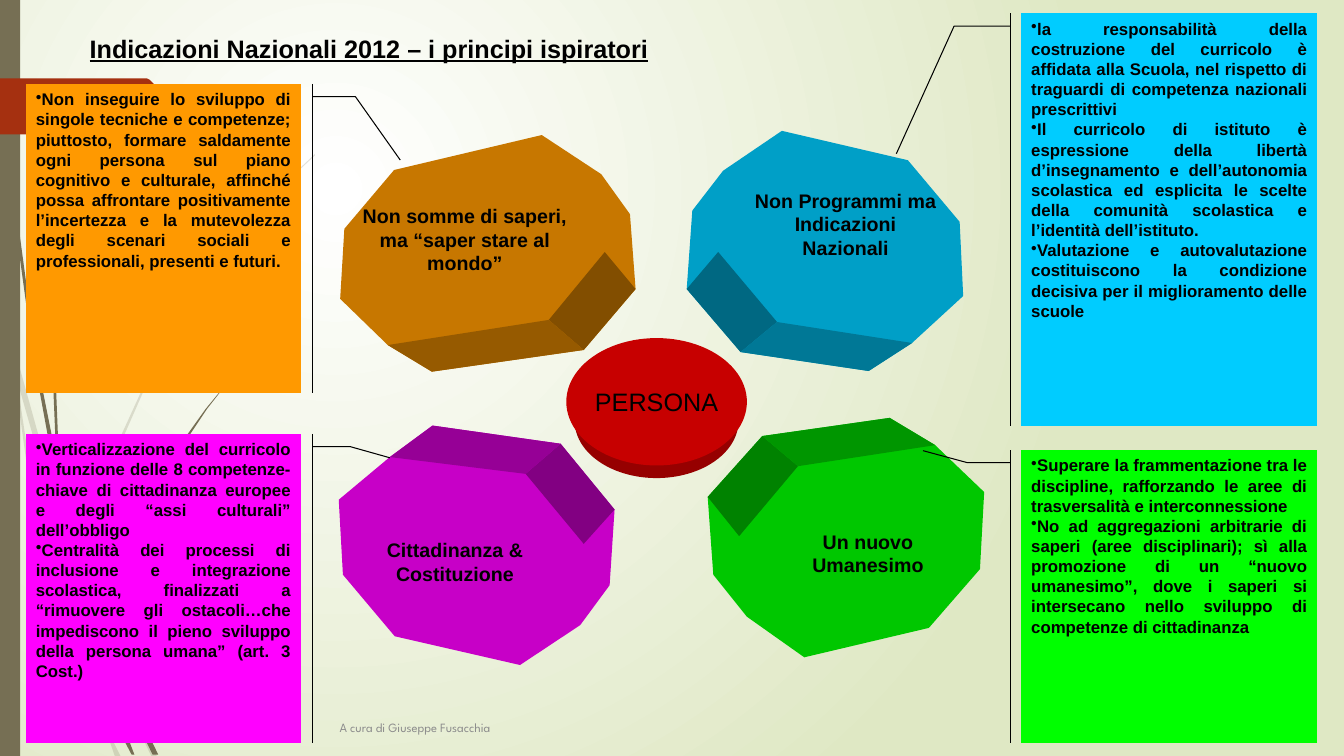
"""Build a slide on the guiding principles of the 2012 national guidelines."""
from lxml import etree
from pptx import Presentation
from pptx.dml.color import RGBColor
from pptx.enum.shapes import MSO_SHAPE
from pptx.enum.text import MSO_ANCHOR, PP_ALIGN
from pptx.oxml import parse_xml
from pptx.oxml.ns import nsdecls, qn
from pptx.util import Pt

OVAL, RECT = MSO_SHAPE.OVAL, MSO_SHAPE.RECTANGLE
CALLOUT = MSO_SHAPE.LINE_CALLOUT_2_ACCENT_BAR
LEFT, MID, JUST = PP_ALIGN.LEFT, PP_ALIGN.CENTER, PP_ALIGN.JUSTIFY
TOP, CENTER = MSO_ANCHOR.TOP, MSO_ANCHOR.MIDDLE
BLACK, GRAY = RGBColor(0, 0, 0), RGBColor(0x8C, 0x8C, 0x8C)
OLIVE, RUST = RGBColor(0x76, 0x6F, 0x54), RGBColor(0xA5, 0x30, 0x10)
CYAN, ORANGE = RGBColor(0, 0xCC, 0xFF), RGBColor(0xFF, 0x99, 0)
LIME, PINK = RGBColor(0, 0xFF, 0), RGBColor(0xFF, 0, 0xFF)
RED = RGBColor(0xFF, 0, 0)
FRONT, SLOPE, SIDE = 0.78, 0.59, 0.51

TITLE = "Indicazioni Nazionali 2012 – i principi ispiratori"
CREDIT = "A cura di Giuseppe Fusacchia"
HUB = "PERSONA"

CALLS = [
    (CYAN, (729.5, 9.5, 211.5, 295), (0.031, -0.038, 0.031, -0.227, 0.34, -0.422), [
        "la responsabilità della costruzione del curricolo è affidata alla Scuola, nel rispetto di traguardi di competenza nazionali prescrittivi",
        "Il curricolo di istituto è espressione della libertà d’insegnamento e dell’autonomia scolastica ed esplicita le scelte della comunità scolastica e l’identità dell’istituto.",
        "Valutazione e autovalutazione costituiscono la condizione decisiva per il miglioramento delle scuole"]),
    (ORANGE, (18.5, 60, 196.5, 221), (0.041, 1.041, 0.041, 1.198, 0.246, 1.361), [
        "Non inseguire lo sviluppo di singole tecniche e competenze; piuttosto, formare saldamente ogni persona sul piano cognitivo e culturale, affinché possa affrontare positivamente l’incertezza e la mutevolezza degli scenari sociali e professionali, presenti e futuri."]),
    (PINK, (18.5, 310, 196.5, 221), (0.041, 1.041, 0.041, 1.179, 0.077, 1.323), [
        "Verticalizzazione del curricolo in funzione delle 8 competenze-chiave di cittadinanza europee e degli “assi culturali” dell’obbligo",
        "Centralità dei processi di inclusione e integrazione scolastica, finalizzati a “rimuovere gli ostacoli…che impediscono il pieno sviluppo della persona umana” (art. 3 Cost.)"]),
    (LIME, (729.5, 321.5, 211.5, 209.5), (0.043, -0.038, 0.043, -0.182, 0.002, -0.332), [
        "Superare la frammentazione tra le discipline, rafforzando le aree di trasversalità e interconnessione",
        "No ad aggregazioni arbitrarie di saperi (aree disciplinari); sì alla promozione di un “nuovo umanesimo”, dove i saperi si intersecano nello sviluppo di competenze di cittadinanza"]),
]

GEMS = [
    (CYAN, "Non Programmi ma Indicazioni Nazionali", (538, 130, 132, 60),
     [(490.5, 206.5), (529, 251.5), (620.5, 265), (651.5, 245), (688, 211.5),
      (685.5, 158.5), (648.5, 114.5), (558.5, 93.5), (516.5, 122), (494.5, 150.5)],
     (513, 180), (555, 230)),
    (ORANGE, "Non somme di saperi, ma “saper stare al mondo”", (255, 141, 154, 60),
     [(454, 206.5), (417, 250), (308.5, 265.5), (277, 246.5), (243, 213.5),
      (246, 163.5), (281.5, 121.5), (387, 96.5), (429.5, 124.5), (450, 153)],
     (432, 180), (392, 228.5)),
    (LIME, "Un nuovo Umanesimo", (554, 365, 132, 60),
     [(505.5, 355), (544.5, 311.5), (635.5, 298.5), (668, 318), (703, 351.5),
      (700, 406.5), (663.5, 448.5), (574.5, 469.5), (533.5, 440.5), (509.5, 410.5)],
     (528, 383), (570, 333)),
    (PINK, "Cittadinanza & Costituzione", (259, 371, 132, 60),
     [(439, 364), (400.5, 317), (309, 304), (278.5, 326.5), (242, 357),
      (245, 410.5), (282, 454.5), (371.5, 475), (414.5, 446.5), (435.5, 418)],
     (417, 388.5), (375.5, 338.5)),
]

PALE = [
    [(42, 376), (60, 431), (61, 422), (45, 374), (10, 248), (12, 271)],
    [(66, 437), (63, 429), (63, 439), (89, 500), (108, 540), (112, 540), (91, 498)],
    [(67, 492), (50, 446), (22, 338), (12, 271), (8, 252), (20, 338), (47, 447),
     (66, 499), (73, 514), (71, 509)],
    [(60, 431), (63, 465), (67, 492), (69, 498), (76, 512), (74, 508), (66, 465), (63, 439)],
    [(63, 420), (79, 333), (115, 251), (165, 176), (193, 143), (209, 126), (225, 111),
     (225, 110), (208, 126), (193, 142), (164, 176), (114, 251), (77, 332), (61, 420), (63, 429)],
    [(73, 514), (82, 540), (86, 540)],
]
DARK = [
    [(5, 79), (12, 168), (24, 256), (40, 343), (41, 346), (40, 326), (26, 256),
     (14, 167), (6, 78), (3, 0), (2, 0)],
    [(63, 426), (76, 464), (76, 454), (67, 425), (43, 340), (46, 364)],
    [(81, 467), (79, 462), (80, 472), (95, 510), (109, 539), (113, 539), (98, 508)],
    [(79, 498), (71, 473), (52, 400), (46, 364), (41, 343), (49, 401), (67, 474),
     (80, 510), (84, 520), (84, 516)],
    [(43, 340), (42, 326), (39, 251), (42, 176), (45, 139), (50, 102), (45, 139),
     (40, 176), (37, 251), (40, 323)],
    [(80, 456), (90, 397), (114, 343), (148, 292), (166, 269), (176, 258), (188, 248),
     (187, 248), (176, 258), (166, 269), (147, 292), (112, 341), (88, 397), (76, 454), (79, 461)],
    [(76, 464), (79, 498), (84, 508), (88, 518), (87, 516), (80, 472)],
    [(84, 508), (79, 498), (84, 516), (84, 520), (94, 539), (96, 539), (88, 518)],
]
TAG = [(0, 56), (105, 56), (107, 57), (125, 75), (125, 78), (107, 95), (105, 96), (0, 96)]

BACK = f"""<a:gradFill {nsdecls('a')} rotWithShape="1"><a:gsLst>
<a:gs pos="0"><a:srgbClr val="FFFFFF"/></a:gs><a:gs pos="100000"><a:srgbClr val="DFE8C4"/></a:gs>
</a:gsLst><a:path path="circle"><a:fillToRect l="50000" t="50000" r="100000" b="100000"/></a:path></a:gradFill>"""


def shade(tint, part):
    return RGBColor(*(round(c * part) for c in tint))


def paint(shape, tint):
    shape.shadow.inherit = False
    shape.fill.solid()
    shape.fill.fore_color.rgb = tint
    shape.line.fill.background()
    return shape


def solid(shapes, kind, at, tint):
    return paint(shapes.add_shape(kind, *map(Pt, at)), tint)


def poly(shapes, dots, tint):
    ends = [(Pt(x), Pt(y)) for x, y in dots]
    pen = shapes.build_freeform(*ends[0], scale=1.0)
    pen.add_line_segments(ends[1:], close=True)
    return paint(pen.convert_to_shape(), tint)


def write(shape, lines, size, bold=True, align=LEFT, anchor=TOP, tint=BLACK, face="Arial"):
    frame = shape.text_frame
    frame.word_wrap = True
    frame.vertical_anchor = anchor
    frame.text = "\n".join(lines)
    for para in frame.paragraphs:
        para.alignment = align
        font = para.font
        font.name, font.size, font.bold = face, Pt(size), bold
        font.color.rgb = tint
    return frame


def label(shapes, at, text, size, **look):
    return write(shapes.add_textbox(*map(Pt, at)), [text], size, **look)


def wisps(shapes):
    for dots in PALE:
        wisp = poly(shapes, dots, OLIVE)
        hue = wisp.element.spPr.find(qn("a:solidFill"))[0]
        etree.SubElement(hue, qn("a:alpha"), val="20000")
    for dots in DARK:
        poly(shapes, dots, OLIVE)


def gem(shapes, tint, text, at, rim, far, inner):
    poly(shapes, rim, shade(tint, FRONT))
    poly(shapes, [far, rim[0], rim[1], inner], shade(tint, SIDE))
    poly(shapes, [inner, *rim[1:4]], shade(tint, SLOPE))
    frame = label(shapes, at, text, 14, align=MID, anchor=CENTER)
    frame.margin_left = frame.margin_right = 0


def callout(shapes, tint, at, bends, lines):
    box = solid(shapes, CALLOUT, at, tint)
    box.line.color.rgb, box.line.width = BLACK, Pt(0.75)
    for i, bend in enumerate(bends):
        box.adjustments[i] = bend
    for para in write(box, lines, 12, align=JUST).paragraphs:
        props = para._p.get_or_add_pPr()
        props.set("marL", "0")
        props.set("indent", "0")
        mark = parse_xml(f'<a:buChar {nsdecls("a")} char="•"/>')
        props.insert(list(props).index(props.find(qn("a:defRPr"))), mark)


def main():
    deck = Presentation()
    deck.slide_width, deck.slide_height = Pt(960), Pt(540)
    slide = deck.slides.add_slide(deck.slide_layouts[6])
    slide.background.fill.solid()
    old = slide.element.find(".//" + qn("p:bgPr")).find(qn("a:solidFill"))
    old.getparent().replace(old, parse_xml(BACK))
    shapes = slide.shapes
    wisps(shapes)
    solid(shapes, RECT, (0, 0, 14.5, 540), OLIVE)
    poly(shapes, TAG, RUST)
    title = label(shapes, (57, 20, 808.5, 29), TITLE, 18)
    title.paragraphs[0].font.underline = True
    for item in GEMS:
        gem(shapes, *item)
    solid(shapes, OVAL, (410.5, 260, 117, 81.5), shade(RED, SLOPE))
    hub = solid(shapes, OVAL, (404.5, 241.5, 129, 91), shade(RED, FRONT))
    write(hub, [HUB], 18, bold=False, align=MID, anchor=CENTER).word_wrap = False
    for item in CALLS:
        callout(shapes, *item)
    label(shapes, (235.5, 505, 600, 29), CREDIT, 9, bold=False, anchor=CENTER,
          tint=GRAY, face="League Spartan")
    deck.save("out.pptx")


if __name__ == "__main__":
    main()
